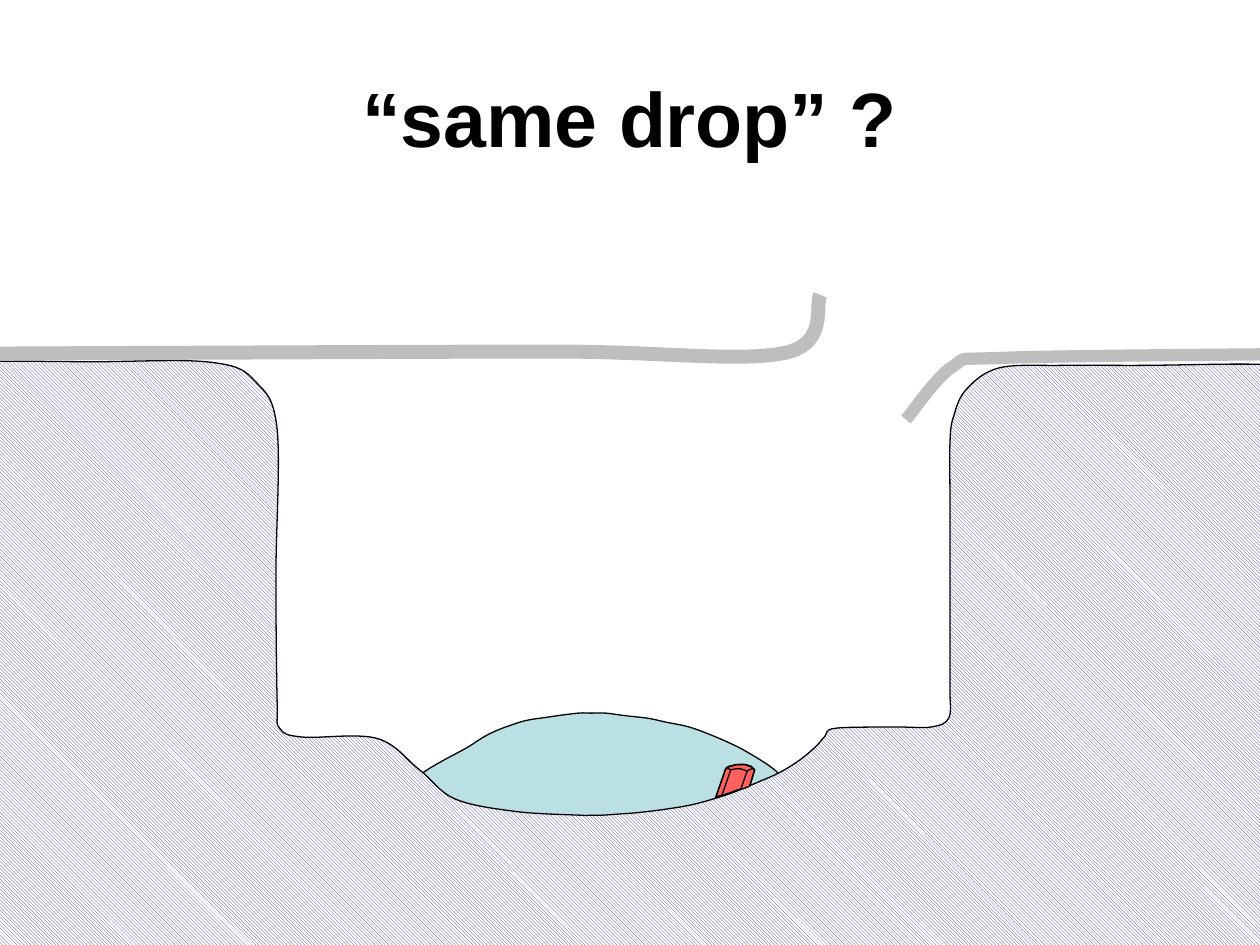
from dataclasses import dataclass

from lxml.etree import SubElement
from pptx import Presentation
from pptx.dml.color import RGBColor
from pptx.enum.dml import MSO_PATTERN
from pptx.enum.shapes import MSO_CONNECTOR
from pptx.enum.text import MSO_ANCHOR, PP_ALIGN
from pptx.oxml.ns import qn
from pptx.util import Cm, Pt


@dataclass(frozen=True)
class Theme:
    font: str = "Arial"
    title_size: Pt = Pt(44)
    ink: RGBColor = RGBColor(0, 0, 0)
    paper: RGBColor = RGBColor(255, 255, 255)
    hatch: RGBColor = RGBColor(0x33, 0x33, 0x99)
    water: RGBColor = RGBColor(0xBB, 0xE0, 0xE3)
    crystal: RGBColor = RGBColor(0xFF, 0x61, 0x61)
    film: RGBColor = RGBColor(0xBE, 0xBE, 0xBE)
    outline: Pt = Pt(0.75)


THEME = Theme()
GRID = (1000, 750)  # drawing units across and down a scene box

# Outlines in drawing units
DROP = [(459, 566), (469, 566), (481, 566), (496, 568), (514, 570), (528, 573),
        (547, 577), (566, 584), (584, 592), (595, 598), (608, 606), (616, 612),
        (620, 616), (622, 618), (579, 643), (491, 657), (330, 631), (376, 590),
        (410, 574), (436, 569)]
GROUND = [(460, 647), (468, 647), (478, 647), (492, 646), (506, 645), (530, 642),
          (552, 638), (579, 630), (601, 621), (619, 613), (635, 603), (648, 592),
          (655, 584), (663, 578), (710, 577), (739, 577), (753, 570), (754, 549),
          (754, 526), (754, 406), (754, 351), (757, 330), (767, 309), (793, 292),
          (843, 290), (909, 290), (984, 289), (1051, 290), (1079, 290),
          (1083, 336), (1040, 754), (674, 770), (-59, 757), (-93, 344),
          (-89, 293), (89, 287), (171, 288), (203, 303), (220, 341), (219, 457),
          (220, 557), (222, 578), (240, 585), (299, 586), (333, 611), (361, 634),
          (409, 644)]
LEFT_FILM = [(-76, 281), (140, 280), (443, 279), (623, 280), (651, 234)]
RIGHT_FILM = [(719, 333), (756, 291), (797, 284), (1024, 281)]
CRYSTAL = [(568, 633), (576, 610), (577, 609), (579, 608), (581, 608), (584, 607),
           (587, 607), (590, 607), (592, 607), (594, 608), (596, 608), (597, 609),
           (598, 610), (599, 611), (595, 624), (590, 626), (585, 627), (580, 629),
           (574, 631), (570, 632)]
CRYSTAL_EDGES = [((568, 633), (576, 610)), ((573, 631), (580, 611)),
                 ((588, 626), (593, 612)), ((595, 624), (599, 611))]
CRYSTAL_RIM = [[(576, 610), (578, 610), (580, 611)],
               [(580, 611), (587, 610), (593, 612)],
               [(593, 612), (597, 610), (599, 611)],
               [(576, 610), (583, 607), (593, 607), (599, 611)]]


def with_controls(points, closed):
    """Follow each point by two Bezier controls and the next point."""
    n = len(points)

    def at(i):
        return points[i % n] if closed else points[min(max(i, 0), n - 1)]

    track = [points[0]]
    for i in range(n if closed else n - 1):
        a, b, c, d = (at(i + k) for k in (-1, 0, 1, 2))
        track.append(tuple(q + (r - p) / 6 for p, q, r in zip(a, b, c)))
        track.append(tuple(r - (t - q) / 6 for q, r, t in zip(b, c, d)))
        track.append(c)
    return track


def bend(sp):
    """Turn every three line pieces of a freeform into one Bezier curve."""
    pieces = list(sp._element.iter(qn("a:lnTo")))
    for i in range(0, len(pieces), 3):
        three = pieces[i:i + 3]
        path = three[0].getparent()
        curve = SubElement(path, qn("a:cubicBezTo"))
        path.replace(three[0], curve)
        for piece in three:
            curve.append(piece[0])
        for piece in three[1:]:
            path.remove(piece)


def place(box, point):
    left, top, width, height = box
    return left + point[0] * width / GRID[0], top + point[1] * height / GRID[1]


def set_line(shape, color, width):
    shape.line.color.rgb = color
    shape.line.width = width


def add_outline(shapes, box, points, closed=False, curved=True, fill=None,
                color=THEME.ink, width=THEME.outline):
    track = with_controls(points, closed) if curved else points
    track = [place(box, p) for p in track]
    builder = shapes.build_freeform(*track[0])
    builder.add_line_segments(track[1:], close=False)
    if closed:
        builder.add_line_segments([], close=True)
    sp = builder.convert_to_shape()
    if curved:
        # A closed curve already ends on its first point
        pieces = list(sp._element.iter(qn("a:lnTo")))
        for extra in pieces[len(track) - 1:]:
            extra.getparent().remove(extra)
        bend(sp)
    sp.shadow.inherit = False
    if fill is None:
        sp.fill.background()
    else:
        sp.fill.solid()
        sp.fill.fore_color.rgb = fill
    set_line(sp, color, width)
    return sp


def add_edge(shapes, box, start, end):
    ends = [round(v) for p in (start, end) for v in place(box, p)]
    line = shapes.add_connector(MSO_CONNECTOR.STRAIGHT, *ends)
    set_line(line, THEME.ink, THEME.outline)
    SubElement(line._element.spPr, qn("a:effectLst"))


def add_title(s, box, text):
    title = s.shapes.title
    title.left, title.top, title.width, title.height = box
    tf = title.text_frame
    tf.text = text
    tf.vertical_anchor = MSO_ANCHOR.MIDDLE
    p = tf.paragraphs[0]
    p.alignment = PP_ALIGN.CENTER
    font = p.runs[0].font
    font.name, font.size, font.bold = THEME.font, THEME.title_size, True
    font.color.rgb = THEME.ink


def add_well(s, box):
    # The ground lies over the lower half of the drop
    add_outline(s.shapes, box, DROP, closed=True, fill=THEME.water)
    ground = add_outline(s.shapes, box, GROUND, closed=True)
    ground.fill.patterned()
    ground.fill.pattern = MSO_PATTERN.LIGHT_DOWNWARD_DIAGONAL
    ground.fill.fore_color.rgb = THEME.hatch
    ground.fill.back_color.rgb = THEME.paper


def add_crystal(s, box):
    shapes = s.shapes.add_group_shape().shapes
    add_outline(shapes, box, CRYSTAL, closed=True, curved=False, fill=THEME.crystal)
    for start, end in CRYSTAL_EDGES:
        add_edge(shapes, box, start, end)
    for rim in CRYSTAL_RIM:
        add_outline(shapes, box, rim)


def add_film(s, box):
    for points, width in ((LEFT_FILM, Pt(8)), (RIGHT_FILM, Pt(7))):
        add_outline(s.shapes, box, points, color=THEME.film, width=width)


def main():
    prs = Presentation()
    prs.slide_width, prs.slide_height = Cm(25.4), Cm(19.05)
    s = prs.slides.add_slide(prs.slide_layouts[5])
    scene = (Cm(0), Cm(0), prs.slide_width, prs.slide_height)
    add_well(s, scene)
    add_crystal(s, scene)
    add_film(s, scene)
    add_title(s, (Cm(1.27), Cm(0.76), Cm(22.86), Cm(3.18)), "“same drop” ?")
    prs.save("out.pptx")


if __name__ == "__main__":
    main()
